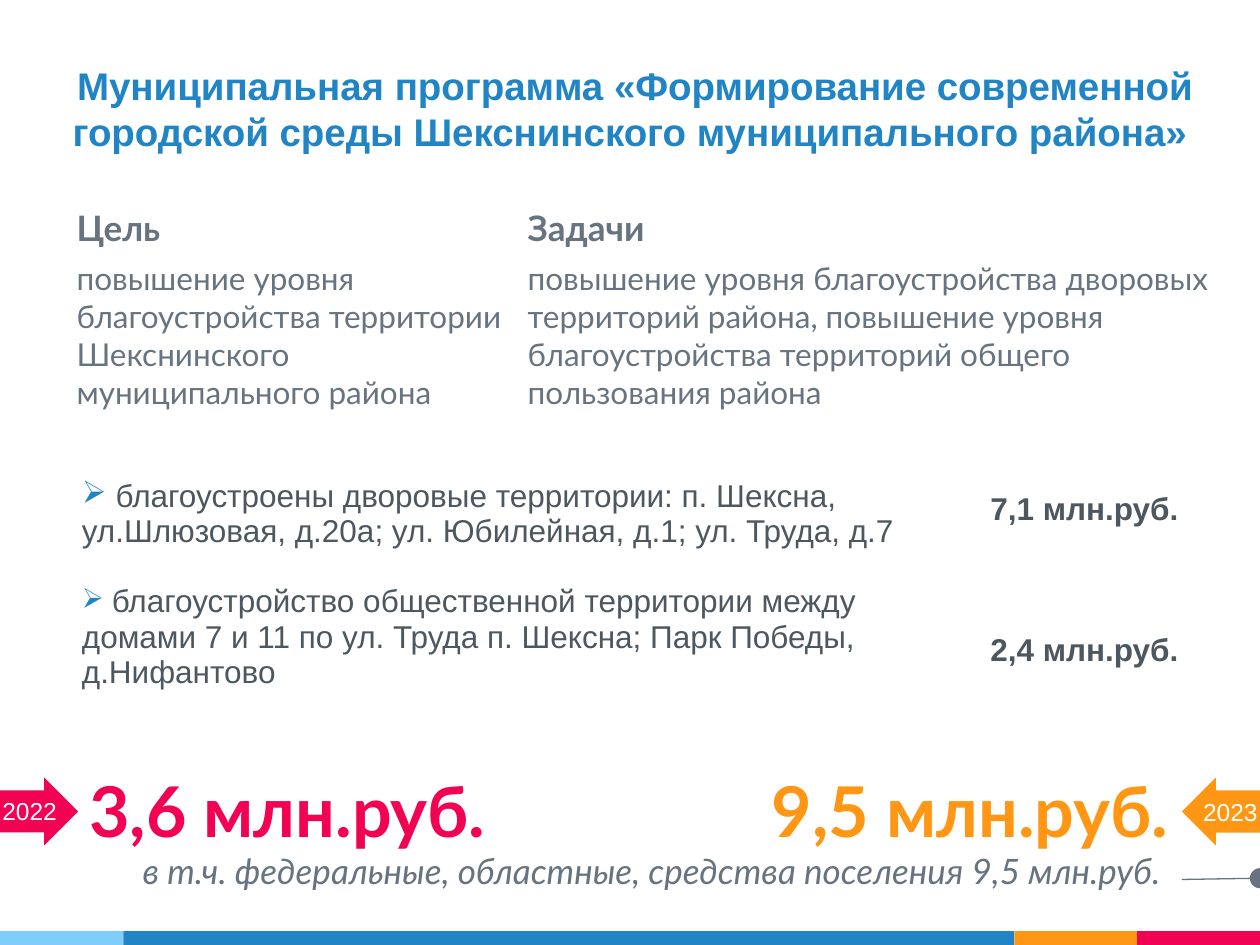
from pptx import Presentation
from pptx import util as u
from pptx.dml.color import RGBColor
from pptx.enum import shapes, text
from pptx.oxml import ns
from lxml import etree

BLUE, SKY, ORANGE, PINK = "2185C5", "7ECEFD", "FF9715", "F20253"
GREY, DARK, WHITE = "677480", "4D5760", "FFFFFF"
LEFT, CENTER, RIGHT = (text.PP_ALIGN.LEFT, text.PP_ALIGN.CENTER,
                       text.PP_ALIGN.RIGHT)
TOP, MIDDLE, BOTTOM = (text.MSO_ANCHOR.TOP, text.MSO_ANCHOR.MIDDLE,
                       text.MSO_ANCHOR.BOTTOM)


def color(value):
    """Turn a hex string into a colour."""
    return RGBColor.from_string(value)


def write(paragraph, words, size=18, font="Lato", ink=GREY, bold=False,
          italic=False, align=LEFT, before=0, margin=0, bullet_size=None):
    """Fill a paragraph with formatted words, after a bullet if one is sized."""
    paragraph.alignment = align
    paragraph.space_before = u.Pt(before)
    props = paragraph._p.get_or_add_pPr()
    props.set("marL", str(u.Inches(margin)))
    props.set("indent", "0")
    pieces = [(words, size)]
    if bullet_size:
        tint = etree.SubElement(props, ns.qn("a:buClr"))
        etree.SubElement(tint, ns.qn("a:srgbClr"), val=BLUE)
        etree.SubElement(props, ns.qn("a:buChar"), char="➢")
        pieces.insert(0, (" ", bullet_size))
    else:
        etree.SubElement(props, ns.qn("a:buNone"))
    for piece, points in pieces:
        run = paragraph.add_run()
        run.text = piece
        run.font.size, run.font.name = u.Pt(points), font
        run.font.bold, run.font.italic = bold, italic
        run.font.color.rgb = color(ink)


class Board:
    """Draw on one slide with a grid of 100 columns and 75 rows."""

    def __init__(self):
        """Open a blank slide."""
        self.deck = Presentation()
        self.deck.slide_width, self.deck.slide_height = u.Inches(10), u.Inches(7.5)
        self.slide = self.deck.slides.add_slide(self.deck.slide_layouts[6])

    def grid(self, *spots):
        """Turn columns and rows into lengths."""
        return [round(spot * self.deck.slide_width / 100) for spot in spots]

    def shape(self, kind, spot, fill, turn=0):
        """Add a plain filled shape."""
        figure = self.slide.shapes.add_shape(kind, *self.grid(*spot))
        figure.shadow.inherit = False
        figure.fill.solid()
        figure.fill.fore_color.rgb = color(fill)
        figure.line.fill.background()
        figure.rotation = turn
        return figure

    def line(self, ends, ink, width):
        """Add a straight line without a shadow."""
        rule = self.slide.shapes.add_connector(
            shapes.MSO_CONNECTOR.STRAIGHT, *self.grid(*ends))
        rule.line.color.rgb = color(ink)
        rule.line.width = u.Pt(width)
        etree.SubElement(rule._element.spPr, ns.qn("a:effectLst"))

    def text(self, spot, *entries, anchor=TOP, inset=1, wrap=True):
        """Add a text box from (words, format) entries."""
        frame = self.slide.shapes.add_textbox(*self.grid(*spot)).text_frame
        frame.word_wrap, frame.vertical_anchor = wrap, anchor
        frame.margin_left, frame.margin_right = self.grid(1, 1)
        frame.margin_top, frame.margin_bottom = self.grid(inset, inset)
        self.fill(frame, entries)

    def fill(self, frame, entries):
        """Write each entry as one paragraph."""
        for index, (words, style) in enumerate(entries):
            paragraph = frame.add_paragraph() if index else frame.paragraphs[0]
            write(paragraph, words, **style)

    def table(self, spot, widths, cells):
        """Add a one-row table without fills."""
        grid = self.slide.shapes.add_table(1, len(widths), *self.grid(*spot)).table
        grid.first_row = grid.horz_banding = False
        for index, (width, (anchor, bottom, entries)) in enumerate(zip(widths, cells)):
            grid.columns[index].width = self.grid(width)[0]
            cell = grid.cell(0, index)
            cell.fill.background()
            cell.vertical_anchor = anchor
            cell.margin_bottom = self.grid(bottom)[0]
            self.fill(cell.text_frame, entries)


def main():
    """Build the programme slide."""
    board = Board()
    edge = 0
    for width, fill in ((9.8, SKY), (70.7, BLUE), (9.75, ORANGE), (9.75, PINK)):
        board.shape(shapes.MSO_SHAPE.RECTANGLE, (edge, 73.9, width, 1.1), fill)
        edge += width

    for left, width, margin, heading, body in (
            (5.1, 36.3, 0, "Цель",
             "повышение уровня благоустройства территории Шекснинского "
             "муниципального района"),
            (39.8, 58.7, 0.11, "Задачи",
             "повышение уровня благоустройства дворовых территорий района, "
             "повышение уровня благоустройства территорий общего "
             "пользования района")):
        board.text((left, 15.4, width, 24.2),
                   (heading, dict(size=20, bold=True, before=6, margin=margin)),
                   (body, dict(before=6, margin=margin)))

    board.text((0, 66.4, 93.8, 5.1),
               ("в т.ч. федеральные, областные, средства поселения "
                "9,5 млн.руб. ",
                dict(size=20, italic=True, align=RIGHT, before=6)))
    board.shape(shapes.MSO_SHAPE.FLOWCHART_CONNECTOR, (99.2, 68.9, 1.6, 1.6), GREY)
    board.line((100.1, 69.7, 93.8, 69.8), GREY, 0.75)
    board.text((0, 0, 100, 17.2),
               (" Муниципальная программа «Формирование современной городской "
                "среды Шекснинского муниципального района»",
                dict(size=22, font="Arial", ink=BLUE, bold=True, align=CENTER)),
               anchor=MIDDLE)

    for year, total, ink, align, left, width, arrow, turn, label, top in (
            ("2022", "3,6 млн.руб.", PINK, LEFT, 6.1, 82.2, 0, 0, -0.8, 62.7),
            ("2023", "9,5 млн.руб.", ORANGE, RIGHT, 23.4, 70.3, 93.8, 180,
             94.4, 62.8)):
        board.text((left, 58.8, width, 9.8),
                   (total, dict(size=40, ink=ink, bold=True, align=align)),
                   anchor=BOTTOM)
        pointer = board.shape(shapes.MSO_SHAPE.RIGHT_ARROW,
                              (arrow, 61.7, 6.2, 5.4), ink, turn)
        pointer.adjustments[0] = 0.62
        board.text((label, top, 6.4, 3.4),
                   (year, dict(size=14, font="Arial", ink=WHITE, align=align)),
                   inset=0.5, wrap=False)

    plain = dict(font="Arial", ink=DARK)
    works = (("благоустроены дворовые территории: п. Шексна, ул.Шлюзовая, "
              "д.20а; ул. Юбилейная, д.1; ул. Труда, д.7",
              dict(plain, bullet_size=18)),
             ("благоустройство общественной территории между домами 7 и 11 "
              "по ул. Труда п. Шексна; Парк Победы, д.Нифантово",
              dict(plain, bullet_size=16, before=20)))
    costs = (("7,1 млн.руб.", dict(plain, bold=True)),
             ("2,4 млн.руб.", dict(plain, bold=True, before=60)))
    board.table((5.5, 37.5, 91.4, 19), (72.1, 19.3),
                ((TOP, 0.5, works), (BOTTOM, 3.5, costs)))
    board.deck.save("out.pptx")


if __name__ == "__main__":
    main()
